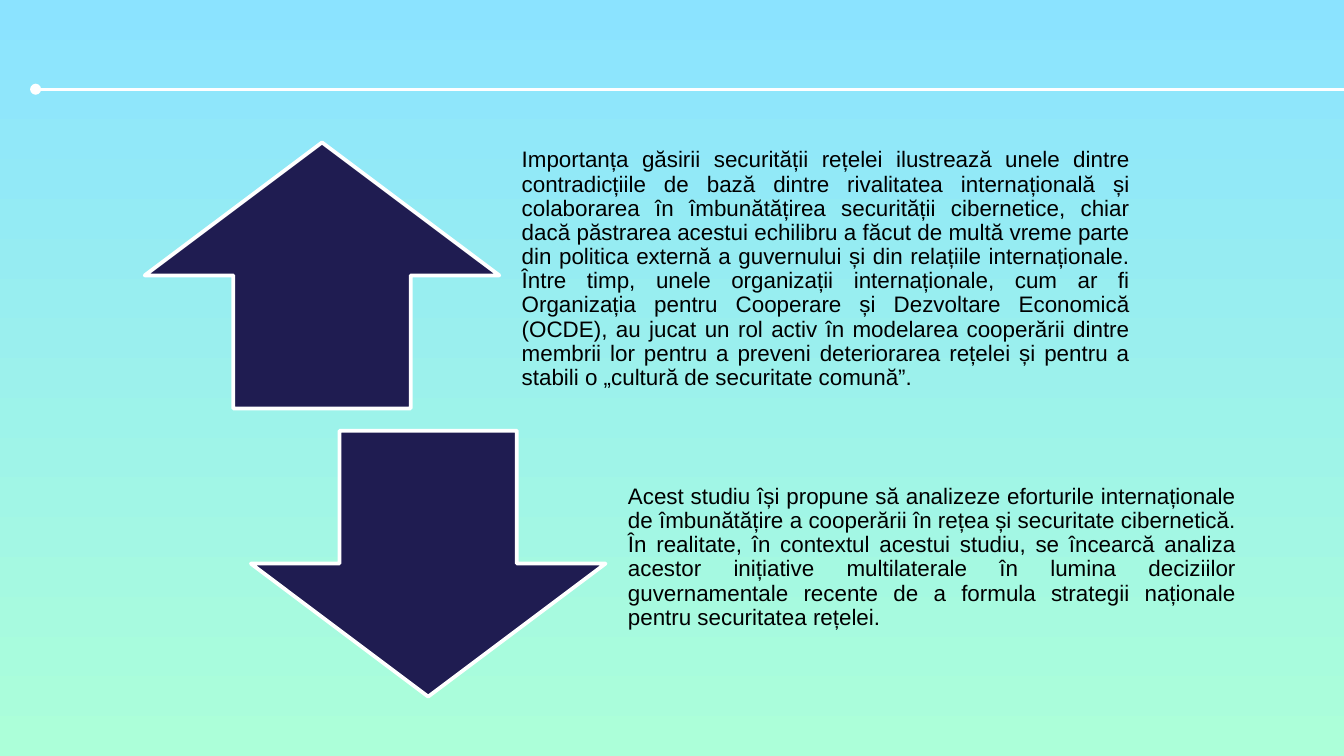
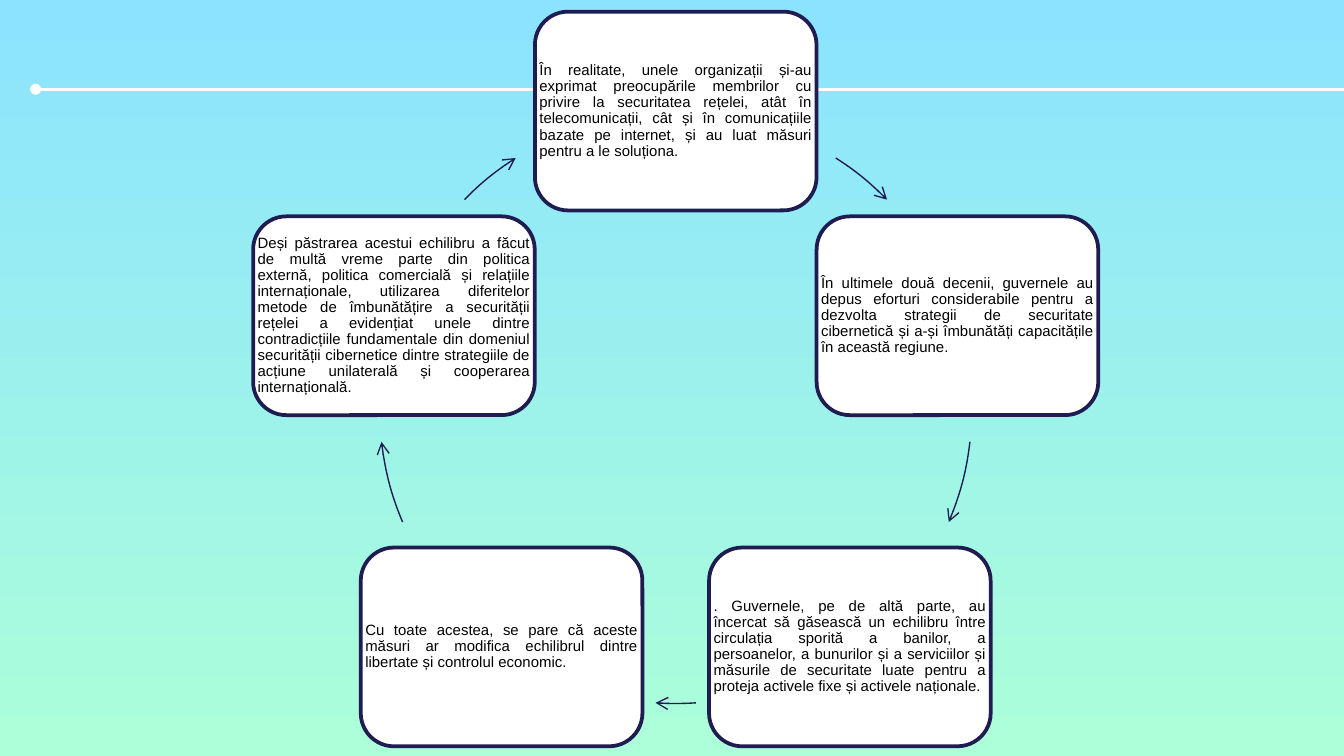
from math import cos, radians, sin

from lxml.etree import SubElement
from pptx import Presentation
from pptx.dml.color import RGBColor
from pptx.enum.shapes import MSO_CONNECTOR, MSO_SHAPE
from pptx.enum.text import MSO_ANCHOR, PP_ALIGN
from pptx.oxml.ns import qn
from pptx.util import Pt

COLORS = {
    "sky": "8BE3FF",
    "mint": "ACFFD9",
    "navy": "1F1C51",
    "white": "FFFFFF",
    "black": "000000",
}
FONT = "Arial"

ARROW_LEFT, ARROW_TOP = 77.5, 76.3
ARROW_WIDTH, ARROW_HEIGHT = 190, 142.5
ARROW_STEP_X, ARROW_STEP_Y = 56.9, 154.4
ARGUMENT_OFFSET, ARGUMENT_WIDTH = 195.5, 339
ARGUMENT_INSETS = (6.5, 0, 6.5, 6.5)

CYCLE_X, CYCLE_Y, CYCLE_RADIUS = 362, 218.2, 158.7
NODE_WIDTH, NODE_HEIGHT = 150.9, 106.5
NODE_INSETS = (2.4, 2.4, 2.4, 2.4)

ARGUMENTS = [
    (MSO_SHAPE.UP_ARROW,
     "Importanța găsirii securității rețelei ilustrează unele dintre "
     "contradicțiile de bază dintre rivalitatea internațională și colaborarea "
     "în îmbunătățirea securității cibernetice, chiar dacă păstrarea acestui "
     "echilibru a făcut de multă vreme parte din politica externă a guvernului "
     "și din relațiile internaționale. Între timp, unele organizații "
     "internaționale, cum ar fi Organizația pentru Cooperare și Dezvoltare "
     "Economică (OCDE), au jucat un rol activ în modelarea cooperării dintre "
     "membrii lor pentru a preveni deteriorarea rețelei și pentru a stabili o "
     "„cultură de securitate comună”."),
    (MSO_SHAPE.DOWN_ARROW,
     "Acest studiu își propune să analizeze eforturile internaționale de "
     "îmbunătățire a cooperării în rețea și securitate cibernetică. În "
     "realitate, în contextul acestui studiu, se încearcă analiza acestor "
     "inițiative multilaterale în lumina deciziilor guvernamentale recente de "
     "a formula strategii naționale pentru securitatea rețelei."),
]

CYCLE_STEPS = [
    ("În realitate, unele organizații și-au exprimat preocupările membrilor cu "
     "privire la securitatea rețelei, atât în telecomunicații, cât și în "
     "comunicațiile bazate pe internet, și au luat măsuri pentru a le "
     "soluționa.", (-57.3, -44.5)),
    ("În ultimele două decenii, guvernele au depus eforturi considerabile "
     "pentru a dezvolta strategii de securitate cibernetică și a-și îmbunătăți "
     "capacitățile în această regiune.", (6.7, 22.8)),
    (". Guvernele, pe de altă parte, au încercat să găsească un echilibru între "
     "circulația sporită a banilor, a persoanelor, a bunurilor și a serviciilor "
     "și măsurile de securitate luate pentru a proteja activele fixe și "
     "activele naționale.", (86.1, 93.9)),
    ("Cu toate acestea, se pare că aceste măsuri ar modifica echilibrul dintre "
     "libertate și controlul economic.", (157.2, 173.3)),
    ("Deși păstrarea acestui echilibru a făcut de multă vreme parte din "
     "politica externă, politica comercială și relațiile internaționale, "
     "utilizarea diferitelor metode de îmbunătățire a securității rețelei a "
     "evidențiat unele dintre contradicțiile fundamentale din domeniul "
     "securității cibernetice dintre strategiile de acțiune unilaterală și "
     "cooperarea internațională.", (224.5, 237.3)),
]


def color(name):
    return RGBColor.from_string(COLORS[name])


def style_line(line, name, width):
    line.color.rgb = color(name)
    line.width = Pt(width)


def add_line_end(shape, end, kind):
    SubElement(shape.line._get_or_add_ln(), qn(f"a:{end}"), type=kind)


def add_themed_slide(deck):
    slide = deck.slides.add_slide(deck.slide_layouts[6])
    backdrop = slide.background.fill
    backdrop.gradient()
    backdrop.gradient_angle = 270
    for stop, name in zip(backdrop.gradient_stops, ("sky", "mint")):
        stop.color.rgb = color(name)
    header_rule = slide.shapes.add_connector(
        MSO_CONNECTOR.STRAIGHT, Pt(19.1), Pt(47.8), Pt(727), Pt(47.8))
    style_line(header_rule.line, "white", 1.5)
    add_line_end(header_rule, "headEnd", "oval")
    SubElement(header_rule._element.spPr, qn("a:effectLst"))
    return slide


def add_filled_shape(slide, kind, box, fill, outline):
    shape = slide.shapes.add_shape(kind, *map(Pt, box))
    shape.shadow.inherit = False
    shape.fill.solid()
    shape.fill.fore_color.rgb = color(fill)
    style_line(shape.line, outline, 2)


def add_justified_text(slide, box, text, size, insets):
    frame = slide.shapes.add_textbox(*map(Pt, box)).text_frame
    frame.word_wrap = True
    frame.vertical_anchor = MSO_ANCHOR.MIDDLE
    (frame.margin_left, frame.margin_top,
     frame.margin_right, frame.margin_bottom) = map(Pt, insets)
    paragraph = frame.paragraphs[0]
    paragraph.alignment = PP_ALIGN.JUSTIFY
    paragraph.line_spacing = 0.9
    run = paragraph.add_run()
    run.text = text
    run.font.name = FONT
    run.font.size = Pt(size)
    run.font.color.rgb = color("black")


def cycle_point(degrees):
    angle = radians(degrees)
    return (CYCLE_X + CYCLE_RADIUS * cos(angle),
            CYCLE_Y + CYCLE_RADIUS * sin(angle))


def bend_along_cycle(arc, start, end):
    arc.left, arc.top = Pt(CYCLE_X - CYCLE_RADIUS), Pt(CYCLE_Y - CYCLE_RADIUS)
    arc.width = arc.height = Pt(2 * CYCLE_RADIUS)
    outline = next(arc._element.iter(qn("a:path")))
    outline.set("w", str(arc.width))
    outline.set("h", str(arc.height))
    for command in list(outline):
        outline.remove(command)
    x, y = map(Pt, cycle_point(start))
    move = SubElement(outline, qn("a:moveTo"))
    SubElement(move, qn("a:pt"), x=str(x - arc.left), y=str(y - arc.top))
    radius = str(Pt(CYCLE_RADIUS))
    SubElement(outline, qn("a:arcTo"), wR=radius, hR=radius,
               stAng=str(round(start % 360 * 60000)),
               swAng=str(round((end - start) * 60000)))


def add_cycle_arrow(slide, start, end):
    builder = slide.shapes.build_freeform(*map(Pt, cycle_point(start)))
    builder.add_line_segments([tuple(map(Pt, cycle_point(end)))], close=False)
    arc = builder.convert_to_shape()
    bend_along_cycle(arc, start, end)
    arc.shadow.inherit = False
    arc.fill.background()
    style_line(arc.line, "navy", 0.75)
    add_line_end(arc, "tailEnd", "arrow")


def add_arguments(slide):
    for index, (arrow, text) in enumerate(ARGUMENTS):
        left = ARROW_LEFT + index * ARROW_STEP_X
        top = ARROW_TOP + index * ARROW_STEP_Y
        add_filled_shape(slide, arrow, (left, top, ARROW_WIDTH, ARROW_HEIGHT),
                         "navy", "white")
        text_box = (left + ARGUMENT_OFFSET, top, ARGUMENT_WIDTH, ARROW_HEIGHT)
        add_justified_text(slide, text_box, text, 12, ARGUMENT_INSETS)


def add_cycle(slide):
    for index, (text, arc) in enumerate(CYCLE_STEPS):
        x, y = cycle_point(-90 + index * 360 / len(CYCLE_STEPS))
        node = (x - NODE_WIDTH / 2, y - NODE_HEIGHT / 2, NODE_WIDTH, NODE_HEIGHT)
        add_filled_shape(slide, MSO_SHAPE.ROUNDED_RECTANGLE, node, "white", "navy")
        add_justified_text(slide, node, text, 8, NODE_INSETS)
        add_cycle_arrow(slide, *arc)


def main():
    deck = Presentation()
    deck.slide_width, deck.slide_height = Pt(720), Pt(405)
    add_arguments(add_themed_slide(deck))
    add_cycle(add_themed_slide(deck))
    deck.save("out.pptx")


if __name__ == "__main__":
    main()
